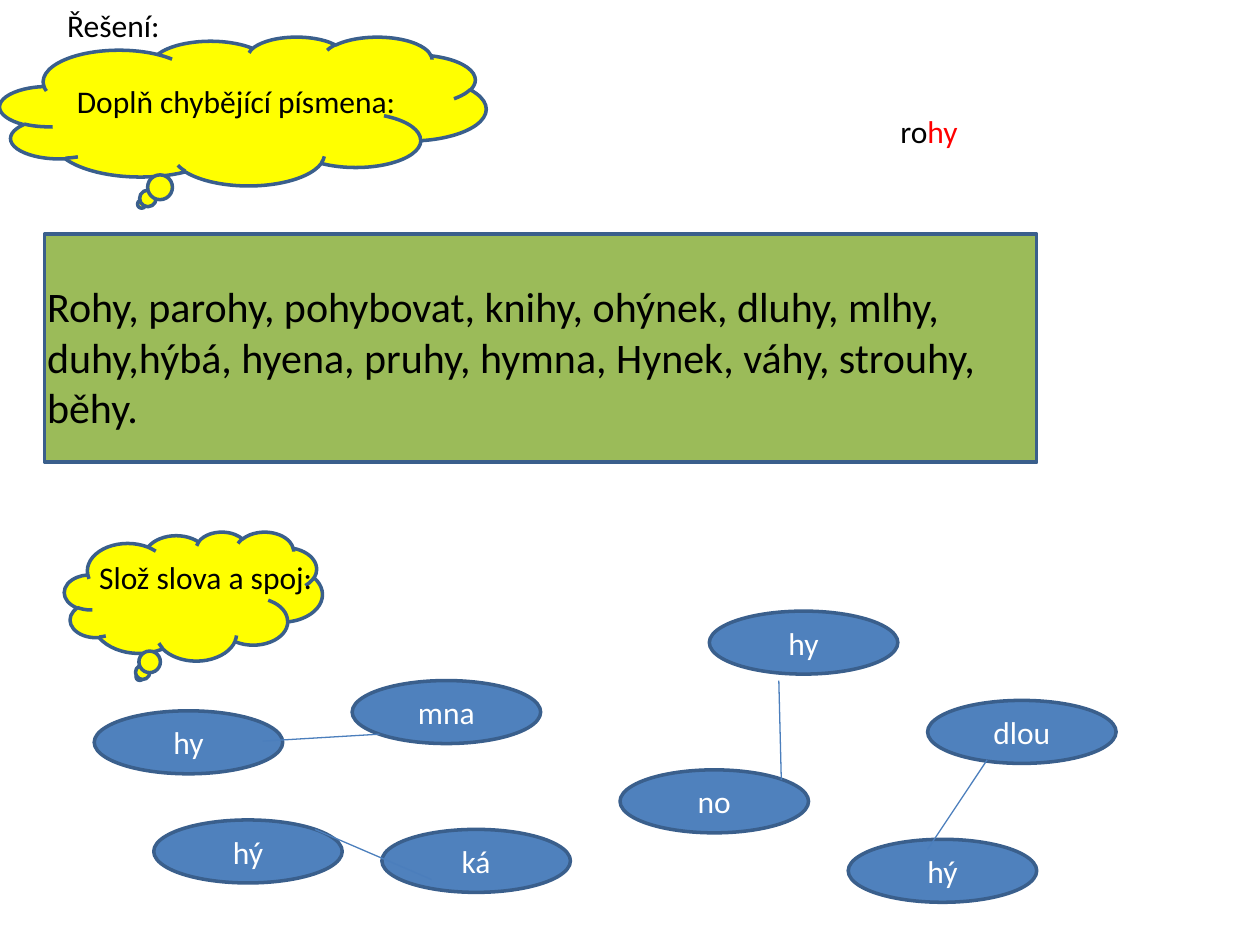
from pptx import Presentation
from pptx.dml.color import RGBColor
from pptx.enum.shapes import MSO_CONNECTOR as Link, MSO_SHAPE as Kind
from pptx.enum.text import MSO_ANCHOR as Anchor, PP_ALIGN as Align
from pptx.oxml.ns import qn
from pptx.util import Cm, Pt
from lxml.etree import SubElement

BLACK, WHITE, RED = "000000", "FFFFFF", "FF0000"
YELLOW, GREEN, BLUE = "FFFF00", "9BBB59", "4F81BD"
EDGE, WIRE = "3A5F8C", "4B7EBC"

# Syllable, left, top
OVALS = [
    ("ká", 7.7, 16.72),
    ("hý", 3.1, 16.53),
    ("hy", 1.9, 14.33),
    ("hy", 14.3, 12.32),
    ("dlou", 18.7, 14.12),
    ("mna", 7.1, 13.72),
    ("no", 12.5, 15.52),
    ("hý", 17.1, 16.92),
]
WIRES = [
    (5.3, 14.94, 7.65, 14.8),
    (15.75, 15.72, 15.7, 13.72),
    (6.35, 16.72, 8.7, 17.73),
    (19.9, 15.32, 18.7, 17.12),
]
WORDS = ("Rohy, parohy, pohybovat, knihy, ohýnek, dluhy, mlhy, duhy,hýbá, "
         "hyena, pruhy, hymna, Hynek, váhy, strouhy, běhy.")


def rgb(code):
    return RGBColor.from_string(code)


def write(frame, text, size=18, color=BLACK, align=Align.LEFT, anchor=Anchor.TOP):
    frame.word_wrap = True
    frame.vertical_anchor = anchor
    para = frame.paragraphs[0]
    para.text = text
    para.alignment = align
    font = para.font
    font.name, font.size = "Calibri", Pt(size)
    font.color.rgb = rgb(color)
    return para


def add_form(slide, kind, box, fill):
    form = slide.shapes.add_shape(kind, *map(Cm, box))
    form.shadow.inherit = False
    form.fill.solid()
    form.fill.fore_color.rgb = rgb(fill)
    form.line.color.rgb = rgb(EDGE)
    form.line.width = Pt(2)
    return form


def add_text(slide, box, text, size=18):
    frame = slide.shapes.add_textbox(*map(Cm, box)).text_frame
    return write(frame, text, size)


def add_oval(slide, text, left, top):
    oval = add_form(slide, Kind.FLOWCHART_CONNECTOR, (left, top, 3.8, 1.27), BLUE)
    write(oval.text_frame, text, 18, WHITE, Align.CENTER, Anchor.MIDDLE)


def add_wire(slide, ends):
    wire = slide.shapes.add_connector(Link.STRAIGHT, *map(Cm, ends))
    wire.line.color.rgb = rgb(WIRE)
    wire.line.width = Pt(0.75)
    SubElement(wire._element.spPr, qn("a:effectLst"))


def set_title(slide, box, text):
    title = slide.shapes.title
    title.left, title.top, title.width, title.height = map(Cm, box)
    write(title.text_frame, text)


def main():
    deck = Presentation()
    deck.slide_width, deck.slide_height = Cm(25.4), Cm(19.05)
    slide = deck.slides.add_slide(deck.slide_layouts[5])

    set_title(slide, (1.1, 0, 5.2, 1.8), "Řešení:")
    add_form(slide, Kind.CLOUD_CALLOUT, (1.3, 10.72, 5.2, 2.6), YELLOW)
    add_form(slide, Kind.RECTANGLE, (0.9, 4.72, 20, 4.6), GREEN)
    add_form(slide, Kind.CLOUD_CALLOUT, (0, 0.74, 9.8, 3), YELLOW)

    add_text(slide, (1.3, 1.52, 18.4, 1.02), "Doplň chybějící písmena:")
    add_text(slide, (0.7, 5.54, 20.2, 3.33), WORDS, 24)
    add_text(slide, (1.75, 11.13, 10.55, 1.02), "Slož slova a spoj:")

    for oval in OVALS:
        add_oval(slide, *oval)
    for ends in WIRES:
        add_wire(slide, ends)

    horns = add_text(slide, (17.9, 2.13, 3.8, 1.02), "ro")
    tail = horns.add_run()
    tail.text = "hy"
    tail.font.color.rgb = rgb(RED)

    deck.save("out.pptx")


if __name__ == "__main__":
    main()
